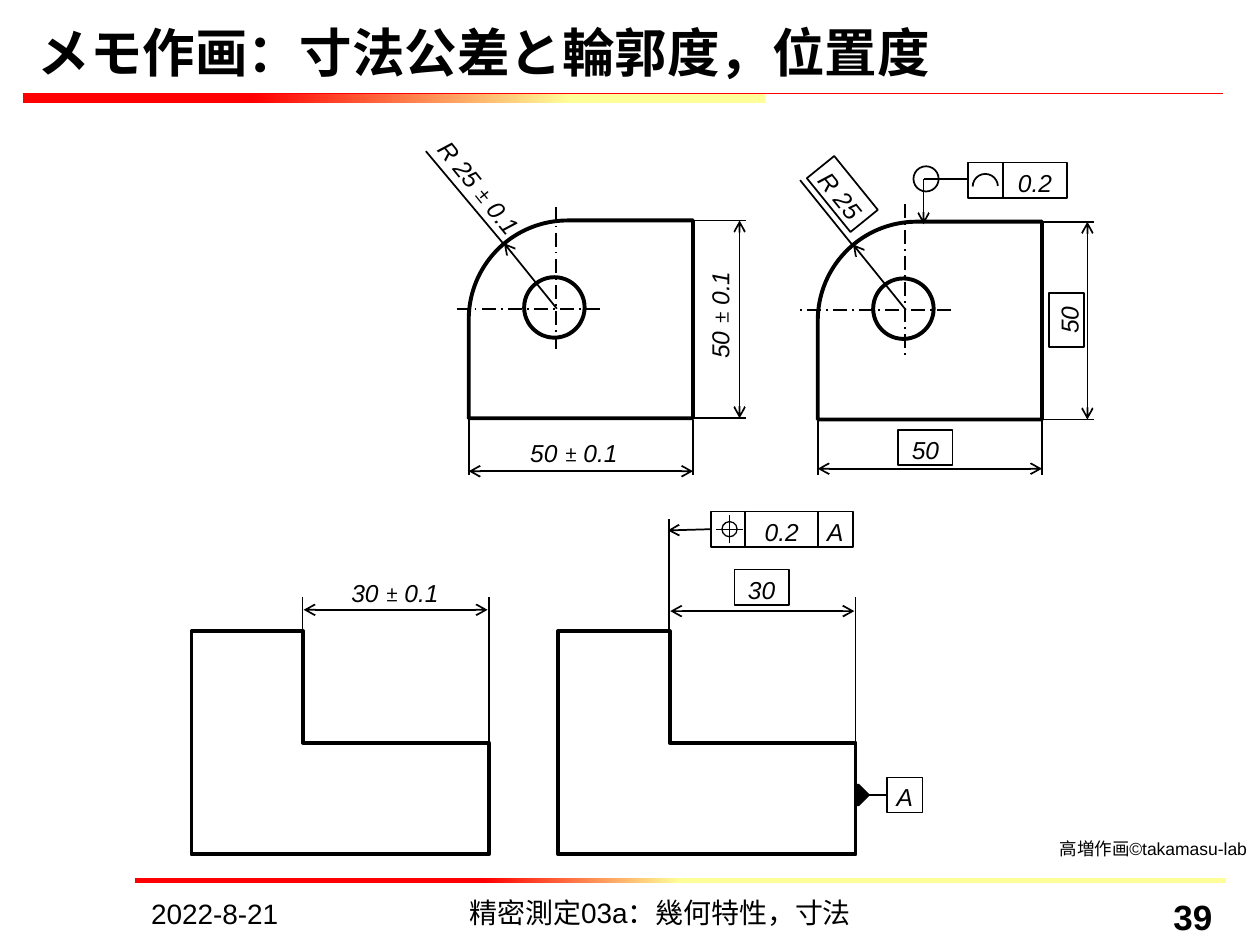
from dataclasses import dataclass

from lxml.etree import SubElement
from pptx import Presentation
from pptx.dml.color import RGBColor
from pptx.enum.dml import MSO_LINE
from pptx.enum.shapes import MSO_CONNECTOR, MSO_SHAPE
from pptx.enum.text import MSO_ANCHOR, PP_ALIGN
from pptx.oxml.ns import qn
from pptx.util import Inches, Pt

BLACK = RGBColor(0, 0, 0)
WHITE = RGBColor(255, 255, 255)
RED = RGBColor(255, 0, 0)
YELLOW = RGBColor(255, 255, 153)


@dataclass
class Line:
    x1: float
    y1: float
    x2: float
    y2: float
    width: float = 1
    head: bool = False
    tail: bool = False
    dashed: bool = False
    color: RGBColor = BLACK


@dataclass
class Label:
    x: float
    y: float
    w: float
    h: float
    text: str
    size: float = 14
    rotation: float = 0
    bold: bool = False
    italic: bool = False
    wrap: bool = True
    align: PP_ALIGN = PP_ALIGN.LEFT
    anchor: MSO_ANCHOR = MSO_ANCHOR.TOP
    inset: float | None = None


@dataclass
class Plate:
    x: float
    y: float
    mark_left: float
    mark_right: float
    mark_top: float
    mark_bottom: float
    dim_x: float
    dim_y: float
    leader_x: float
    leader_y: float


def draw_line(s, line: Line) -> None:
    c = s.shapes.add_connector(MSO_CONNECTOR.STRAIGHT, Inches(line.x1), Inches(line.y1),
                               Inches(line.x2), Inches(line.y2))
    c.line.color.rgb = line.color
    c.line.width = Pt(line.width)
    if line.dashed:
        c.line.dash_style = MSO_LINE.LONG_DASH_DOT
    ln = c._element.spPr.find(qn("a:ln"))
    for tag, wanted in (("a:headEnd", line.head), ("a:tailEnd", line.tail)):
        if wanted:
            SubElement(ln, qn(tag), type="arrow")
    SubElement(c._element.spPr, qn("a:effectLst"))


def draw_shape(s, kind: MSO_SHAPE, x: float, y: float, w: float, h: float,
               width: float = 1, fill: RGBColor | None = None, rotation: float = 0):
    sp = s.shapes.add_shape(kind, Inches(x), Inches(y), Inches(w), Inches(h))
    sp.shadow.inherit = False
    sp.rotation = rotation
    if fill is None:
        sp.fill.background()
    else:
        sp.fill.solid()
        sp.fill.fore_color.rgb = fill
    sp.line.color.rgb = BLACK
    sp.line.width = Pt(width)
    return sp


def draw_bar(s, x: float, y: float, w: float, h: float, red_end: float, yellow_start: float) -> None:
    sp = draw_shape(s, MSO_SHAPE.RECTANGLE, x, y, w, h)
    sp.line.fill.background()
    sp.fill.gradient()
    sp.fill.gradient_angle = 0
    for stop, color, position in zip(sp.fill.gradient_stops, (RED, YELLOW), (red_end, yellow_start)):
        stop.color.rgb = color
        stop.position = position


def write_text(sp, t: Label) -> None:
    tf = sp.text_frame
    tf.word_wrap = t.wrap
    tf.vertical_anchor = t.anchor
    if t.inset is not None:
        tf.margin_left = tf.margin_right = tf.margin_top = tf.margin_bottom = Inches(t.inset)
    p = tf.paragraphs[0]
    p.alignment = t.align
    for part in filter(None, t.text.partition("± ")):
        r = p.add_run()
        r.text = part
        sign = part == "± "
        r.font.name = "Cambria" if sign else "Arial"
        r.font.size = Pt(t.size)
        r.font.bold = t.bold
        r.font.italic = t.italic and not sign
        r.font.color.rgb = BLACK


def draw_label(s, t: Label) -> None:
    sp = s.shapes.add_textbox(Inches(t.x), Inches(t.y), Inches(t.w), Inches(t.h))
    sp.rotation = t.rotation
    write_text(sp, t)


def draw_tolerance(s, x: float, y: float, w: float, text: str, rotation: float = 0) -> None:
    draw_label(s, Label(x, y, w, 0.34, text, rotation=rotation, italic=True, wrap=False,
                        align=PP_ALIGN.CENTER))


def draw_frame(s, x: float, y: float, w: float, text: str = "", rotation: float = 0, width: float = 1) -> None:
    sp = draw_shape(s, MSO_SHAPE.RECTANGLE, x, y, w, 0.28, width, WHITE, rotation)
    write_text(sp, Label(x, y, w, 0.28, text, italic=True, wrap=False, align=PP_ALIGN.CENTER, inset=0.04))


def draw_plate(s, a: Plate) -> None:
    right, bottom = a.x + 1.78, a.y + 1.57
    center_x, center_y = a.x + 0.69, a.y + 0.7
    sp = draw_shape(s, MSO_SHAPE.SNIP_ROUND_RECTANGLE, a.x, a.y, 1.78, 1.57, 2.25)
    sp.adjustments[0], sp.adjustments[1] = 0.5, 0
    draw_shape(s, MSO_SHAPE.OVAL, a.x + 0.44, a.y + 0.45, 0.48, 0.48, 2.25)
    draw_line(s, Line(a.mark_right, center_y, a.mark_left, center_y, dashed=True))
    draw_line(s, Line(center_x, a.mark_top, center_x, a.mark_bottom, dashed=True))
    draw_line(s, Line(a.x + 0.7, center_y, a.x + 0.28, a.y + 0.18, tail=True))
    draw_line(s, Line(a.x + 0.28, a.y + 0.19, a.leader_x, a.leader_y))
    draw_line(s, Line(a.x, a.dim_y, right, a.dim_y, head=True, tail=True))
    draw_line(s, Line(a.dim_x, bottom, a.dim_x, a.y, head=True, tail=True))
    for y in (a.y, bottom):
        draw_line(s, Line(a.dim_x + 0.05, y, right, y))
    for x in (a.x, right):
        draw_line(s, Line(x, bottom + 0.01, x, 3.77))


def draw_block(s, x: float, extension_top: float, dim_y: float) -> None:
    step, right = x + 0.88, x + 2.36
    draw_shape(s, MSO_SHAPE.CORNER, x, 5.01, 2.36, 1.77, 2.25)
    draw_line(s, Line(step, 5, step, extension_top))
    draw_line(s, Line(right, 5.89, right, 4.74))
    draw_line(s, Line(step + 0.01, dim_y, right - 0.01, dim_y, head=True, tail=True))


def main() -> None:
    """Build the slide on dimensional tolerance, profile and position."""
    prs = Presentation()
    prs.slide_width, prs.slide_height = Inches(10), Inches(7.5)
    s = prs.slides.add_slide(prs.slide_layouts[6])

    draw_bar(s, 1.07, 6.97, 8.66, 0.04, 0.32, 0.5)
    draw_bar(s, 0.18, 0.74, 5.89, 0.08, 0.31, 0.74)
    draw_line(s, Line(0.18, 0.74, 9.71, 0.74, 0.75, color=RED))
    for t in (
        Label(0.2, 0.21, 9.53, 0.5, "メモ作画：寸法公差と輪郭度，位置度", 30, bold=True, anchor=MSO_ANCHOR.BOTTOM),
        Label(1.1, 7.07, 1.41, 0.3, "2022-8-21", 16),
        Label(2.64, 7.06, 5.2, 0.29, "精密測定03a：幾何特性，寸法", 16, align=PP_ALIGN.CENTER),
        Label(8.07, 7.06, 1.65, 0.29, "39", 20, bold=True, align=PP_ALIGN.RIGHT),
        Label(8.37, 6.61, 1.58, 0.25, "高増作画©takamasu-lab", 10, inset=0.04),
    ):
        draw_label(s, t)

    draw_plate(s, Plate(3.72, 1.75, 3.63, 4.76, 1.64, 2.77, 5.87, 3.74, 3.38, 1.2))
    draw_plate(s, Plate(6.49, 1.76, 6.35, 7.55, 1.62, 2.84, 8.63, 3.72, 6.35, 1.43))
    draw_block(s, 1.52, 4.74, 4.84)
    draw_block(s, 4.43, 4.12, 4.85)
    for spot in ((4.1, 3.43, 0.91, "50 ± 0.1"), (5.26, 2.33, 0.91, "50 ± 0.1", 270),
                 (3.25, 1.32, 1.1, "R 25 ± 0.1", 51), (2.68, 4.54, 0.91, "30 ± 0.1")):
        draw_tolerance(s, *spot)

    for line in (Line(7.24, 6.31, 6.83, 6.31, 0.75), Line(5.3, 4.21, 5.64, 4.2, head=True),
                 Line(7.33, 1.42, 7.68, 1.42), Line(7.33, 1.78, 7.33, 1.42, head=True)):
        draw_line(s, line)
    for spot in ((5.83, 4.52, 0.43, "30"), (5.64, 4.06, 0.28), (5.91, 4.06, 0.59, "0.2"),
                 (6.49, 4.06, 0.28, "A"), (7.04, 6.17, 0.28, "A", 0, 0.75), (7.13, 3.41, 0.43, "50"),
                 (8.25, 2.4, 0.43, "50", 270), (6.41, 1.4, 0.55, "R 25", 51),
                 (7.68, 1.29, 0.28), (7.96, 1.29, 0.51, "0.2")):
        draw_frame(s, *spot)

    draw_shape(s, MSO_SHAPE.ISOSCELES_TRIANGLE, 6.77, 6.27, 0.16, 0.08, 1.5, BLACK, 90)
    draw_line(s, Line(5.68, 4.2, 5.9, 4.2, 0.75))
    draw_line(s, Line(5.79, 4.09, 5.79, 4.31, 0.75))
    draw_shape(s, MSO_SHAPE.OVAL, 5.73, 4.14, 0.12, 0.12, 0.75)
    profile = draw_shape(s, MSO_SHAPE.ARC, 7.72, 1.38, 0.2, 0.2, rotation=270)
    profile.adjustments[0], profile.adjustments[1] = 162, 52.19
    draw_shape(s, MSO_SHAPE.OVAL, 7.25, 1.32, 0.2, 0.2)
    prs.save("out.pptx")


if __name__ == "__main__":
    main()
